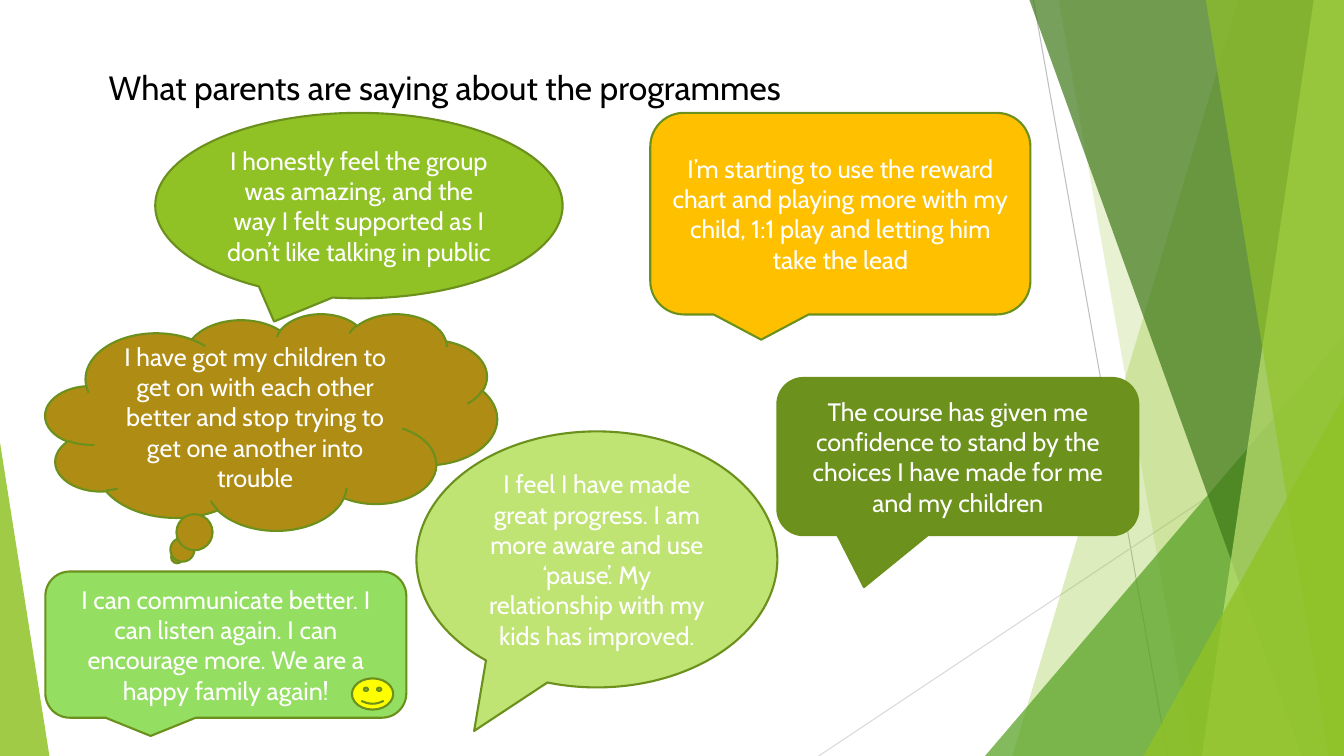
from dataclasses import dataclass

from lxml import etree
from pptx import Presentation
from pptx.dml.color import RGBColor
from pptx.enum.shapes import MSO_CONNECTOR, MSO_SHAPE
from pptx.enum.text import MSO_ANCHOR, MSO_AUTO_SIZE, PP_ALIGN
from pptx.oxml.ns import qn
from pptx.util import Inches, Pt

STRAIGHT = MSO_CONNECTOR.STRAIGHT
TRIANGLE = MSO_SHAPE.ISOSCELES_TRIANGLE
OVAL_CALLOUT = MSO_SHAPE.OVAL_CALLOUT
ROUND_CALLOUT = MSO_SHAPE.ROUNDED_RECTANGULAR_CALLOUT
CLOUD_CALLOUT = MSO_SHAPE.CLOUD_CALLOUT
SMILEY = MSO_SHAPE.SMILEY_FACE
LEFT, CENTER = PP_ALIGN.LEFT, PP_ALIGN.CENTER
TOP, MIDDLE = MSO_ANCHOR.TOP, MSO_ANCHOR.MIDDLE

WIDTH, HEIGHT = 13.33, 7.5
FONT = "Cabin"
OUTLINE = "6B901C"


@dataclass
class Ray:
    start: tuple
    end: tuple
    color: str


@dataclass
class Band:
    """A facet running from the top edge to the bottom edge, up to the right side."""
    top_x: float
    bottom_x: float
    color: str
    opacity: int


@dataclass
class Corner:
    """A right triangle standing on the bottom edge."""
    left: float
    top: float
    width: float
    apex: float
    color: str
    opacity: int


@dataclass
class Quote:
    kind: MSO_SHAPE
    box: tuple
    color: str
    text: str
    adjust: tuple = ()


RAYS = [
    Ray((10.25, 0), (11.58, HEIGHT), "BFBFBF"),
    Ray((WIDTH, 4.03), (8.12, HEIGHT), "D9D9D9"),
]
FACETS = [
    Band(12.28, 10.04, "90C226", 30),
    Band(10.5, 11.83, "90C226", 20),
    Corner(9.77, 3.33, 3.56, 1, "54A021", 72),
    Band(10.21, 12.91, "3F7819", 70),
    Band(13.03, 11.92, "C0E474", 70),
    Band(11.96, 13.18, "90C226", 65),
    Corner(11.34, 3.93, 1.99, 1, "90C226", 80),
    Corner(0, 4.39, 0.49, 0, "90C226", 85),
]
QUOTES = [
    Quote(OVAL_CALLOUT, (1.54, 1.12, 4.04, 1.84), "90C226",
          "I honestly feel the group was amazing, and the way I felt supported "
          "as I don’t like talking in public"),
    Quote(ROUND_CALLOUT, (6.45, 1.12, 3.77, 2), "FFC000",
          "I’m starting to use the reward chart and playing more with my child, "
          "1:1 play and letting him take the lead"),
    Quote(CLOUD_CALLOUT, (0.45, 3.11, 4.48, 2.15), "AF8C14",
          "I have got my children to get on with each other better and stop "
          "trying to get one another into trouble"),
    Quote(ROUND_CALLOUT, (7.71, 3.75, 3.58, 1.56), "6C921D",
          "The course has given me confidence to stand by the choices I have "
          "made for me and my children", (-0.26, 0.83)),
    Quote(OVAL_CALLOUT, (4.13, 4.28, 3.58, 2.54), "C0E474",
          "I feel I have made great progress. I am more aware and use ‘pause’. "
          "My relationship with my kids has improved.", (-0.34, 0.67)),
    Quote(ROUND_CALLOUT, (0.45, 5.67, 3.58, 1.45), "94DE61",
          "I can communicate better. I can listen again. I can encourage more. "
          "We are a happy family again!"),
]


def rgb(value: str) -> RGBColor:
    return RGBColor.from_string(value)


def paint(shape, color: str, opacity: int = 100, outline: str = "") -> None:
    shape.shadow.inherit = False
    shape.fill.solid()
    shape.fill.fore_color.rgb = rgb(color)
    if opacity < 100:
        color_node = shape._element.spPr.find(qn("a:solidFill"))[0]
        etree.SubElement(color_node, qn("a:alpha"), val=str(opacity * 1000))
    if outline:
        shape.line.color.rgb = rgb(outline)
        shape.line.width = Pt(1.5)
    else:
        shape.line.fill.background()


def write(shape, text: str, *, size: int = 18, color: str = "FFFFFF",
          align: PP_ALIGN = CENTER, anchor: MSO_ANCHOR = MIDDLE) -> None:
    frame = shape.text_frame
    frame.word_wrap = True
    frame.vertical_anchor = anchor
    paragraph = frame.paragraphs[0]
    paragraph.alignment = align
    run = paragraph.add_run()
    run.text = text
    run.font.name = FONT
    run.font.size = Pt(size)
    run.font.color.rgb = rgb(color)


def draw_ray(shapes, ray: Ray) -> None:
    line = shapes.add_connector(STRAIGHT, *map(Inches, ray.start + ray.end))
    line.line.color.rgb = rgb(ray.color)
    line.line.width = Pt(0.75)
    etree.SubElement(line._element.spPr, qn("a:effectLst"))


def draw_band(shapes, band: Band) -> None:
    outline = shapes.build_freeform(Inches(band.top_x), 0)
    corners = [(WIDTH, 0), (WIDTH, HEIGHT), (band.bottom_x, HEIGHT)]
    outline.add_line_segments([(Inches(x), Inches(y)) for x, y in corners])
    paint(outline.convert_to_shape(), band.color, band.opacity)


def draw_corner(shapes, corner: Corner) -> None:
    box = (corner.left, corner.top, corner.width, HEIGHT - corner.top)
    triangle = shapes.add_shape(TRIANGLE, *map(Inches, box))
    triangle.adjustments[0] = corner.apex
    paint(triangle, corner.color, corner.opacity)


def draw_quote(shapes, quote: Quote) -> None:
    bubble = shapes.add_shape(quote.kind, *map(Inches, quote.box))
    for index, value in enumerate(quote.adjust):
        bubble.adjustments[index] = value
    paint(bubble, quote.color, outline=OUTLINE)
    write(bubble, quote.text)


def main() -> None:
    deck = Presentation()
    deck.slide_width, deck.slide_height = Inches(WIDTH), Inches(HEIGHT)
    shapes = deck.slides.add_slide(deck.slide_layouts[6]).shapes

    # Faceted background
    for ray in RAYS:
        draw_ray(shapes, ray)
    for facet in FACETS:
        if isinstance(facet, Band):
            draw_band(shapes, facet)
        else:
            draw_corner(shapes, facet)

    # Heading
    heading = shapes.add_textbox(*map(Inches, (0.98, 0.61, 8.46, 0.5)))
    write(heading, "What parents are saying about the programmes",
          size=24, color="000000", align=LEFT, anchor=TOP)
    heading.text_frame.auto_size = MSO_AUTO_SIZE.SHAPE_TO_FIT_TEXT

    # Parents' quotes and the happy face
    for quote in QUOTES:
        draw_quote(shapes, quote)
    happy_face = shapes.add_shape(SMILEY, *map(Inches, (3.49, 6.73, 0.41, 0.31)))
    paint(happy_face, "FFFF00", outline=OUTLINE)

    deck.save("out.pptx")


if __name__ == "__main__":
    main()
